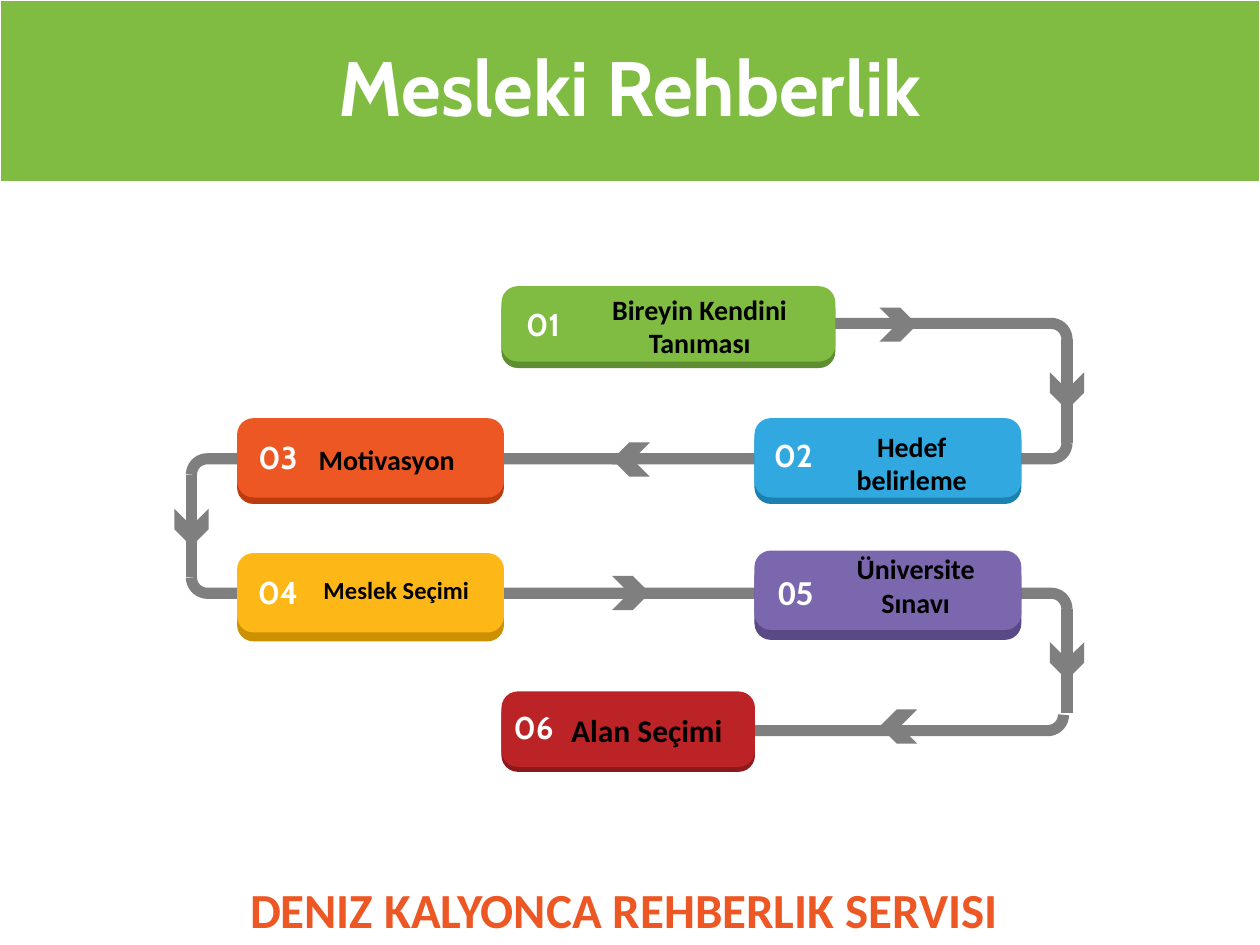
import math
from typing import NamedTuple

from lxml import etree
from pptx import Presentation
from pptx import util as u
from pptx.dml.color import RGBColor
from pptx.enum import shapes, text
from pptx.oxml.ns import qn

COLORS = {
    "white": "FFFFFF", "black": "000000", "pipe": "7F7F7F",
    "green": "7FBC41", "dark green": "5F8D31",
    "blue": "31A8DF", "dark blue": "1B81B1",
    "orange": "EC5724", "dark orange": "BC3C10",
    "yellow": "FDB817", "dark yellow": "CD9002",
    "purple": "7B67AD", "dark purple": "5A4986",
    "red": "BB2326", "dark red": "8C1A1D",
}
PIPE_WIDTH = u.Pt(6.38)
BEND_RADIUS = 0.32
CARD_RADIUS = 0.33


class Box(NamedTuple):
    left: float
    top: float
    width: float
    height: float


class Step(NamedTuple):
    number: str
    label: str
    color: str
    card: Box
    depth: float
    number_box: Box
    label_box: Box
    label_size: int = 16
    number_size: int = 18
    number_font: str = "Cabin"
    wrap: bool = True


class Point(NamedTuple):
    x: float
    y: float


class Elbow(NamedTuple):
    start: Point
    corner: Point
    end: Point


class Arrow(NamedTuple):
    left: float
    top: float
    rotation: int


STEPS = [
    Step("01", "Bireyin Kendini\nTanıması", "green", Box(10.11, 5.77, 6.73, 1.52), 0.13,
         Box(10.06, 6.02, 1.78, 1.02), Box(11.58, 5.77, 5.05, 3)),
    Step("02", "Hedef belirleme", "blue", Box(15.21, 8.43, 5.38, 1.6), 0.13,
         Box(15.32, 8.66, 1.35, 1.02), Box(16.46, 8.53, 3.84, 2.31)),
    Step("03", "Motivasyon", "orange", Box(4.78, 8.43, 5.38, 1.6), 0.13,
         Box(4.93, 8.71, 1.35, 1.02), Box(5.75, 8.79, 4.09, 0.94)),
    Step("05", "Üniversite Sınavı", "purple", Box(15.21, 11.1, 5.38, 1.6), 0.2,
         Box(15.37, 11.38, 1.35, 1.12), Box(16.54, 11, 3.84, 1.63),
         number_size=20, number_font="Calibri"),
    Step("04", "Meslek Seçimi", "yellow", Box(4.78, 11.15, 5.38, 1.6), 0.18,
         Box(4.93, 11.43, 1.35, 1.02), Box(6.07, 11.46, 3.84, 0.86), label_size=14),
    Step("06", "Alan Seçimi", "red", Box(10.11, 13.94, 5.11, 1.52), 0.1,
         Box(10.08, 14.15, 1.35, 1.02), Box(11.25, 14.2, 3.58, 1.02),
         label_size=18, wrap=False),
]
ELBOWS = [
    Elbow(Point(21.44, 14.41), Point(21.44, 14.73), Point(12.37, 14.73)),
    Elbow(Point(16.79, 11.96), Point(21.51, 11.96), Point(21.51, 12.28)),
    Elbow(Point(21.51, 8.93), Point(21.51, 9.25), Point(12.34, 9.25)),
    Elbow(Point(13.23, 6.52), Point(21.51, 6.52), Point(21.51, 6.84)),
    Elbow(Point(3.86, 11.64), Point(3.86, 11.96), Point(20.19, 11.96)),
    Elbow(Point(12.45, 9.25), Point(3.86, 9.25), Point(3.86, 9.57)),
]
UPRIGHTS = [
    (Point(21.51, 6.84), Point(21.51, 8.93)),
    (Point(3.86, 9.57), Point(3.86, 11.64)),
    (Point(21.51, 12.28), Point(21.51, 14.38)),
]
ARROWS = [
    Arrow(17.73, 6.2, 0), Arrow(21.13, 7.54, 90), Arrow(12.34, 8.92, 180),
    Arrow(3.48, 10.29, 90), Arrow(21.13, 12.98, 90), Arrow(12.34, 11.61, 0),
    Arrow(17.73, 14.3, 180),
]


def rgb(name: str) -> RGBColor:
    return RGBColor.from_string(COLORS[name])


def place(box: Box) -> list[u.Cm]:
    return [u.Cm(length) for length in box]


def write(shape, content: str, *, size: int, font: str = "Calibri", color: str = "black",
          wrap: bool = True, anchor=text.MSO_ANCHOR.TOP, spacing: float = 1.0) -> None:
    frame = shape.text_frame
    frame.text = content
    frame.word_wrap = wrap
    frame.auto_size = text.MSO_AUTO_SIZE.NONE
    frame.vertical_anchor = anchor
    for paragraph in frame.paragraphs:
        paragraph.alignment = text.PP_ALIGN.CENTER
        paragraph.line_spacing = spacing
        for run in paragraph.runs:
            run.font.name = font
            run.font.size = u.Pt(size)
            run.font.bold = True
            run.font.color.rgb = rgb(color)


def add_filled(slide, kind, box: Box, color: str):
    shape = slide.shapes.add_shape(kind, *place(box))
    shape.shadow.inherit = False
    shape.fill.solid()
    shape.fill.fore_color.rgb = rgb(color)
    shape.line.fill.background()
    return shape


def style_pipe(line) -> None:
    line.color.rgb = rgb("pipe")
    line.width = PIPE_WIDTH


def toward(origin: Point, target: Point) -> Point:
    share = BEND_RADIUS / math.dist(origin, target)
    return Point(origin.x + (target.x - origin.x) * share,
                 origin.y + (target.y - origin.y) * share)


def add_elbow(slide, elbow: Elbow) -> None:
    corner = elbow.corner
    entry, leave = toward(corner, elbow.start), toward(corner, elbow.end)
    points = [elbow.start]
    for degrees in range(0, 91, 10):
        a = 1 - math.sin(math.radians(degrees))
        b = 1 - math.cos(math.radians(degrees))
        points.append(Point(corner.x + (entry.x - corner.x) * a + (leave.x - corner.x) * b,
                            corner.y + (entry.y - corner.y) * a + (leave.y - corner.y) * b))
    points.append(elbow.end)
    first, *rest = [(u.Cm(point.x), u.Cm(point.y)) for point in points]
    builder = slide.shapes.build_freeform(*first)
    builder.add_line_segments(rest, close=False)
    shape = builder.convert_to_shape()
    shape.shadow.inherit = False
    shape.fill.background()
    style_pipe(shape.line)


def add_upright(slide, start: Point, end: Point) -> None:
    connector = slide.shapes.add_connector(
        shapes.MSO_CONNECTOR.STRAIGHT, *[u.Cm(value) for value in (*start, *end)])
    style_pipe(connector.line)
    etree.SubElement(connector._element.spPr, qn("a:effectLst"))


def add_step(slide, step: Step) -> None:
    base = step.card._replace(top=step.card.top + step.depth)
    for box, color in ((base, f"dark {step.color}"), (step.card, step.color)):
        card = add_filled(slide, shapes.MSO_SHAPE.ROUNDED_RECTANGLE, box, color)
        card.adjustments[0] = CARD_RADIUS / box.height
    write(slide.shapes.add_textbox(*place(step.number_box)), step.number,
          size=step.number_size, font=step.number_font, color="white")
    write(slide.shapes.add_textbox(*place(step.label_box)), step.label,
          size=step.label_size, wrap=step.wrap)


def main() -> None:
    presentation = Presentation()
    presentation.slide_width, presentation.slide_height = u.Cm(25.4), u.Cm(19.05)
    slide = presentation.slides.add_slide(presentation.slide_layouts[5])

    title = slide.shapes.title
    title.left, title.top, title.width, title.height = place(Box(0, 0, 25.4, 3.68))
    title.fill.solid()
    title.fill.fore_color.rgb = rgb("green")
    title.line.color.rgb = rgb("white")
    title.line.width = u.Pt(1.5)
    write(title, "Mesleki Rehberlik", size=44, font="Cabin", color="white",
          anchor=text.MSO_ANCHOR.MIDDLE, spacing=0.9)

    for elbow in ELBOWS:
        add_elbow(slide, elbow)
    for start, end in UPRIGHTS:
        add_upright(slide, start, end)
    for step in STEPS:
        add_step(slide, step)
    for arrow in ARROWS:
        chevron = add_filled(slide, shapes.MSO_SHAPE.CHEVRON,
                             Box(arrow.left, arrow.top, 0.76, 0.69), "pipe")
        chevron.rotation = arrow.rotation

    write(slide.shapes.add_textbox(*place(Box(4.75, 17.6, 15.65, 1.45))),
          "DENIZ KALYONCA REHBERLIK SERVISI", size=28, color="orange", wrap=False)
    presentation.save("out.pptx")


if __name__ == "__main__":
    main()
